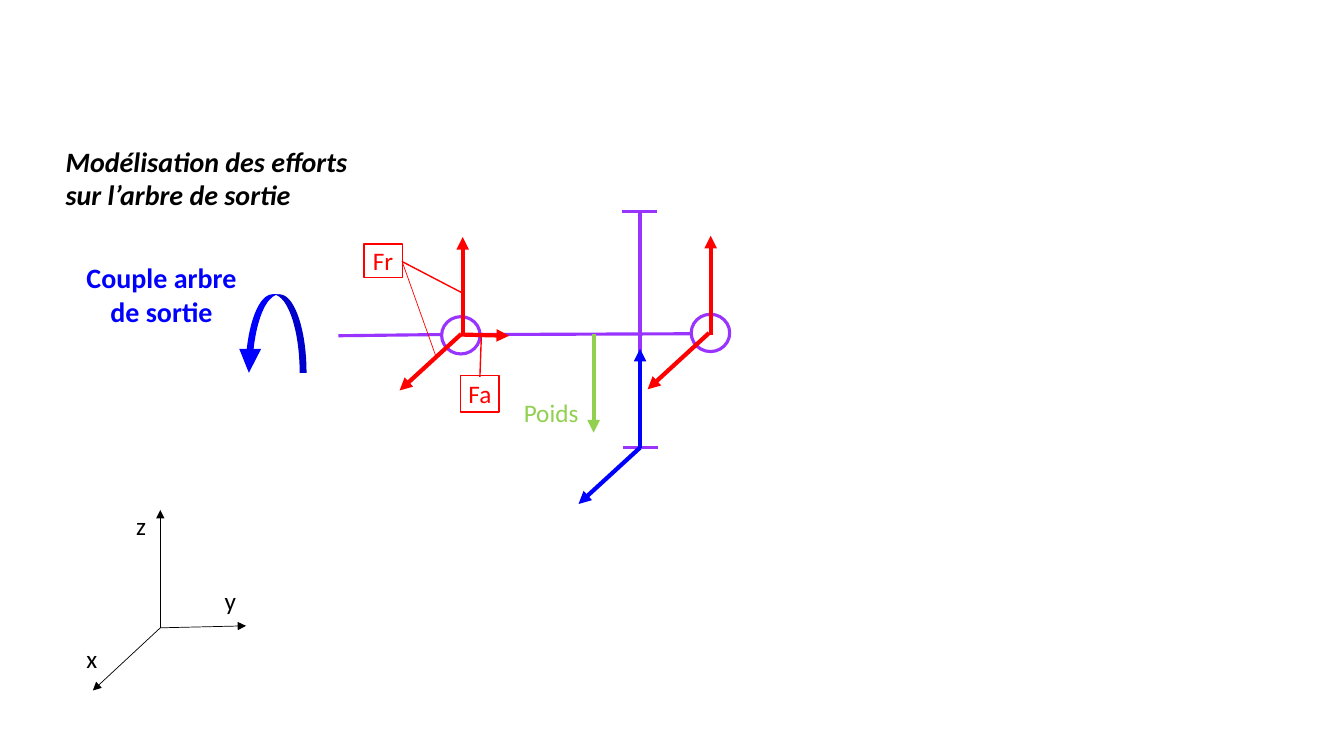
import pptx
import pptx.util
import pptx.dml.color
import pptx.enum.shapes
import pptx.enum.text
import pptx.oxml.ns
import lxml.etree

Cm = pptx.util.Cm
Pt = pptx.util.Pt
RGBColor = pptx.dml.color.RGBColor
SHAPE = pptx.enum.shapes.MSO_SHAPE
ALIGN = pptx.enum.text.PP_ALIGN
ANCHOR = pptx.enum.text.MSO_ANCHOR
qn = pptx.oxml.ns.qn

BLACK = RGBColor(0x00, 0x00, 0x00)
WHITE = RGBColor(0xFF, 0xFF, 0xFF)
PURPLE = RGBColor(0x99, 0x33, 0xFF)
BLUE = RGBColor(0x00, 0x00, 0xFF)
RED = RGBColor(0xFF, 0x00, 0x00)
GREEN = RGBColor(0x92, 0xD0, 0x50)

deck = pptx.Presentation()
deck.slide_width, deck.slide_height = Cm(33.87), Cm(19.05)
page = deck.slides.add_slide(deck.slide_layouts[5])


def add_line(start, end, color, width, arrow=False):
    line = page.shapes.add_connector(
        pptx.enum.shapes.MSO_CONNECTOR.STRAIGHT,
        Cm(start[0]), Cm(start[1]), Cm(end[0]), Cm(end[1]))
    line.line.color.rgb = color
    line.line.width = Pt(width)
    if arrow:
        outline = line.line._get_or_add_ln()
        lxml.etree.SubElement(outline, qn("a:tailEnd"), type="triangle")
    lxml.etree.SubElement(line._element.spPr, qn("a:effectLst"))


def write_lines(frame, lines, size, color, bold=False, italic=False):
    for index, (text, align) in enumerate(lines):
        para = frame.paragraphs[0] if index == 0 else frame.add_paragraph()
        para.alignment = align
        para.line_spacing = 1.0
        para.space_before = Pt(0)
        span = para.add_run()
        span.text = text
        span.font.name = "Calibri"
        span.font.size = Pt(size)
        span.font.bold = bold
        span.font.italic = italic
        span.font.color.rgb = color


# Title
title = page.shapes.title
title.left, title.top, title.width, title.height = Cm(1.4), Cm(3.51), Cm(7.98), Cm(1.96)
title.text_frame.vertical_anchor = ANCHOR.TOP
title.text_frame.auto_size = pptx.enum.text.MSO_AUTO_SIZE.NONE
title.text_frame.word_wrap = False
write_lines(title.text_frame,
            [("Modélisation des efforts", ALIGN.LEFT), ("sur l’arbre de sortie", ALIGN.LEFT)],
            20, BLACK, bold=True, italic=True)

# Bearings
for left, top in [(11.13, 7.98), (17.42, 7.92)]:
    bearing = page.shapes.add_shape(SHAPE.OVAL, Cm(left), Cm(top), Cm(0.97), Cm(0.94))
    bearing.shadow.inherit = False
    bearing.fill.solid()
    bearing.fill.fore_color.rgb = WHITE
    bearing.line.color.rgb = PURPLE
    bearing.line.width = Pt(2.25)

# Gear wheel and shaft
for start, end in [((16.13, 5.33), (16.13, 11.28)),
                   ((15.67, 5.33), (16.56, 5.33)),
                   ((15.7, 11.28), (16.59, 11.28)),
                   ((12.07, 8.43), (17.42, 8.41)),
                   ((11.13, 8.43), (8.53, 8.46))]:
    add_line(start, end, PURPLE, 2.25)

# Output torque
torque = page.shapes.add_shape(SHAPE.CURVED_RIGHT_ARROW, Cm(5.87), Cm(7.54), Cm(1.98), Cm(1.73))
torque.rotation = 90
torque.shadow.inherit = False
for index, value in enumerate([0.1, 0.32, 0.35]):
    torque.adjustments[index] = value
torque.fill.solid()
torque.fill.fore_color.rgb = BLUE
torque.line.fill.background()

# Vertical and oblique forces at the gear and at both bearings
for x, y, color, shift in [(16.13, 11.28, BLUE, 0),
                           (11.66, 8.46, RED, 0.04),
                           (17.91, 8.43, RED, 0.04)]:
    add_line((x, y), (x, y - 2.49), color, 3, arrow=True)
    add_line((x - shift, y - shift), (x - shift - 1.55, y - shift + 1.42), color, 3, arrow=True)

# Axial force and weight
add_line((11.61, 8.43), (12.83, 8.46), RED, 3, arrow=True)
add_line((14.96, 8.41), (14.96, 10.9), GREEN, 3, arrow=True)

# Reference axes
for tip in [(4.04, 12.85), (6.2, 15.77), (2.34, 17.4)]:
    add_line((4.04, 15.82), tip, BLACK, 0.5, arrow=True)

# Labels
for lines, left, top, width, height, size, color, bold in [
        ([("Couple arbre", ALIGN.LEFT), ("de sortie", ALIGN.CENTER)],
         1.93, 6.45, 4.5, 1.96, 20, BLUE, True),
        ([("x", ALIGN.LEFT)], 1.93, 16.08, 0.79, 1.02, 18, BLACK, False),
        ([("y", ALIGN.LEFT)], 5.41, 14.63, 0.81, 1.02, 18, BLACK, False),
        ([("z", ALIGN.LEFT)], 3.18, 12.73, 0.79, 1.02, 18, BLACK, False),
        ([("Poids", ALIGN.LEFT)], 12.95, 9.88, 1.93, 1.02, 18, GREEN, False)]:
    box = page.shapes.add_textbox(Cm(left), Cm(top), Cm(width), Cm(height))
    box.text_frame.word_wrap = False
    write_lines(box.text_frame, lines, size, color, bold)

# Callouts for the radial and axial forces
for text, left, top, height, leader in [
        ("Fr", 9.17, 6.15, 0.84, (0.53, 1, 1.45, 2.53)),
        ("Fa", 11.61, 9.47, 0.91, (0.03, 0.5, -1.15, 0.54))]:
    callout = page.shapes.add_shape(SHAPE.LINE_CALLOUT_1, Cm(left), Cm(top), Cm(0.97), Cm(height))
    callout.shadow.inherit = False
    for index, value in enumerate(leader):
        callout.adjustments[index] = value
    callout.fill.solid()
    callout.fill.fore_color.rgb = WHITE
    callout.line.color.rgb = RED
    callout.line.width = Pt(1)
    frame = callout.text_frame
    frame.margin_left = frame.margin_right = frame.margin_top = frame.margin_bottom = 0
    frame.vertical_anchor = ANCHOR.MIDDLE
    write_lines(frame, [(text, ALIGN.CENTER)], 18, RED)
add_line((10.13, 6.58), (11, 9.02), RED, 0.5)

deck.save("out.pptx")
